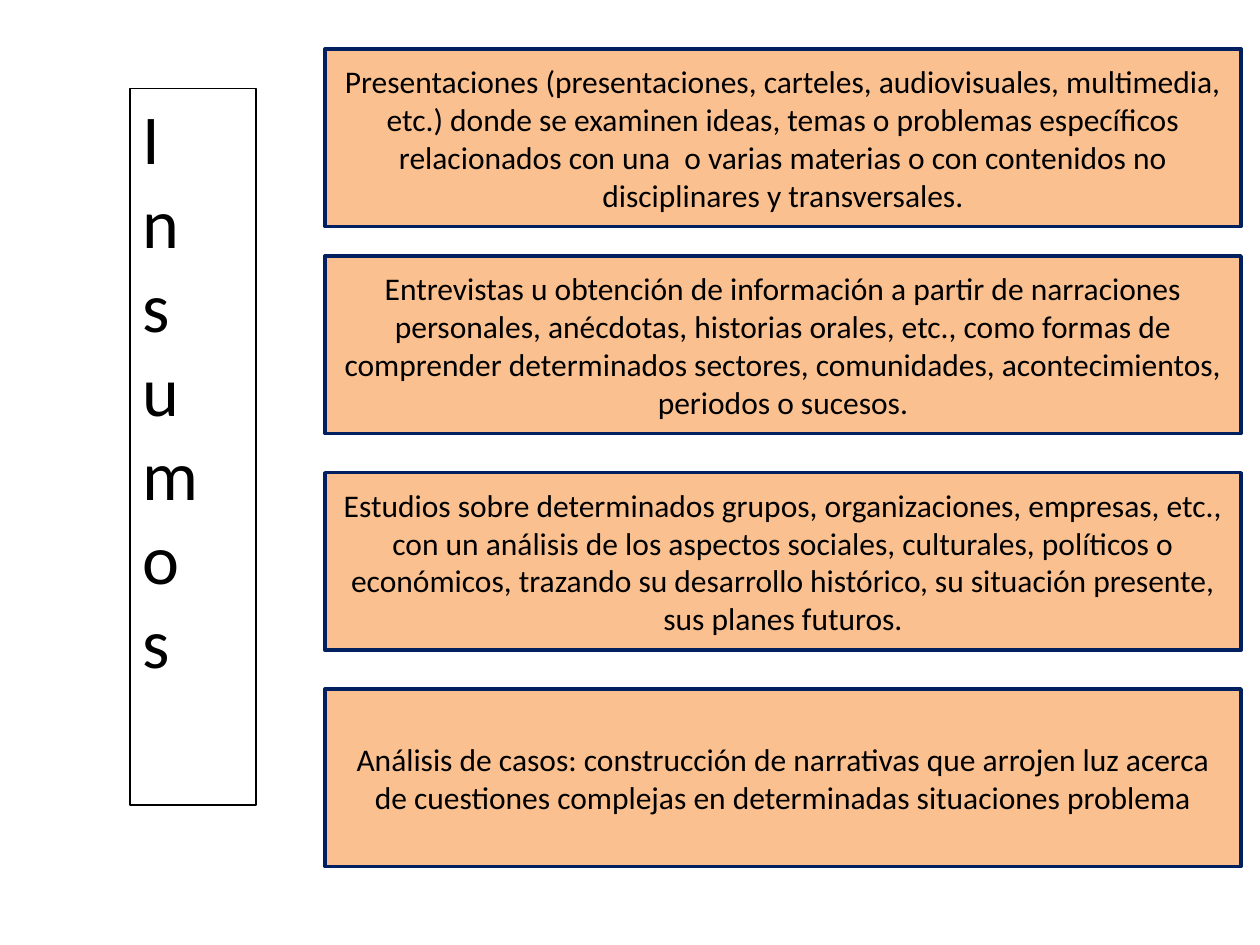
from pptx import Presentation
from pptx.dml.color import RGBColor
from pptx.enum.shapes import MSO_SHAPE
from pptx.enum.text import MSO_ANCHOR, MSO_AUTO_SIZE, PP_ALIGN
from pptx.util import Cm, Pt

RECTANGLE = MSO_SHAPE.RECTANGLE
MIDDLE = MSO_ANCHOR.MIDDLE
FIT_SHAPE = MSO_AUTO_SIZE.SHAPE_TO_FIT_TEXT
CENTER = PP_ALIGN.CENTER

BLACK = RGBColor(0x00, 0x00, 0x00)
NAVY = RGBColor(0x00, 0x20, 0x60)
PEACH = RGBColor(0xFA, 0xC0, 0x90)

# Top edge in centimetres, and text
INPUTS = [
    (0.99, "Presentaciones (presentaciones, carteles, audiovisuales, multimedia, etc.) "
           "donde se examinen ideas, temas o problemas específicos relacionados con una  "
           "o varias materias o con contenidos no disciplinares y transversales."),
    (5.16, "Entrevistas u obtención de información a partir de narraciones personales, "
           "anécdotas, historias orales, etc., como formas de comprender determinados "
           "sectores, comunidades, acontecimientos, periodos o sucesos."),
    (9.53, "Estudios sobre determinados grupos, organizaciones, empresas, etc., con un "
           "análisis de los aspectos sociales, culturales, políticos o económicos, trazando "
           "su desarrollo histórico, su situación presente, sus planes futuros."),
    (13.89, "Análisis de casos: construcción de narrativas que arrojen luz acerca de "
            "cuestiones complejas en determinadas situaciones problema"),
]


def write_text(shape, text, size):
    paragraph = shape.text_frame.paragraphs[0]
    paragraph.text = text
    paragraph.font.name = "Calibri"
    paragraph.font.size = Pt(size)
    paragraph.font.color.rgb = BLACK
    return paragraph


presentation = Presentation()
presentation.slide_width = Cm(25.4)
presentation.slide_height = Cm(19.05)
slide = presentation.slides.add_slide(presentation.slide_layouts[6])

title = slide.shapes.add_textbox(Cm(2.62), Cm(1.78), Cm(2.54), Cm(14.45))
title.line.color.rgb = BLACK
title.line.width = Pt(0.75)
title.text_frame.word_wrap = False
title.text_frame.auto_size = FIT_SHAPE
title.element.txBody.bodyPr.set("vert", "wordArtVert")
write_text(title, "Insumos", 40)

for top, text in INPUTS:
    box = slide.shapes.add_shape(RECTANGLE, Cm(6.55), Cm(top), Cm(18.47), Cm(3.58))
    box.shadow.inherit = False
    box.fill.solid()
    box.fill.fore_color.rgb = PEACH
    box.line.color.rgb = NAVY
    box.line.width = Pt(2)
    box.text_frame.word_wrap = True
    box.text_frame.vertical_anchor = MIDDLE
    write_text(box, text, 18).alignment = CENTER

presentation.save("out.pptx")
